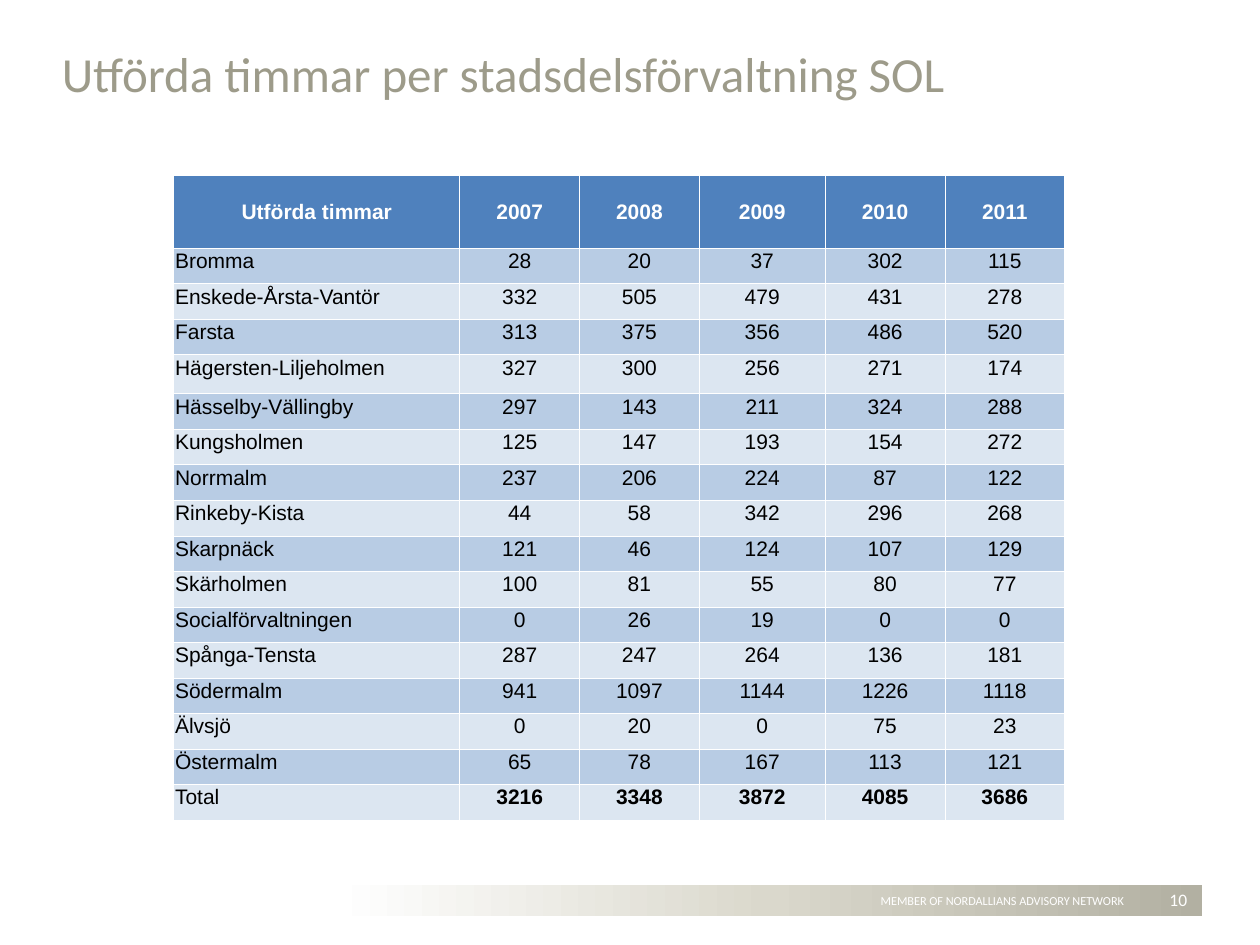
from copy import deepcopy

from lxml import etree
from pptx import Presentation
from pptx.dml import color
from pptx.enum import shapes, text
from pptx.oxml import ns
from pptx.util import Inches, Pt

YEARS = ["2007", "2008", "2009", "2010", "2011"]
HOURS = [
    ("Bromma", 28, 20, 37, 302, 115),
    ("Enskede-Årsta-Vantör", 332, 505, 479, 431, 278),
    ("Farsta", 313, 375, 356, 486, 520),
    ("Hägersten-Liljeholmen", 327, 300, 256, 271, 174),
    ("Hässelby-Vällingby", 297, 143, 211, 324, 288),
    ("Kungsholmen", 125, 147, 193, 154, 272),
    ("Norrmalm", 237, 206, 224, 87, 122),
    ("Rinkeby-Kista", 44, 58, 342, 296, 268),
    ("Skarpnäck", 121, 46, 124, 107, 129),
    ("Skärholmen", 100, 81, 55, 80, 77),
    ("Socialförvaltningen", 0, 26, 19, 0, 0),
    ("Spånga-Tensta", 287, 247, 264, 136, 181),
    ("Södermalm", 941, 1097, 1144, 1226, 1118),
    ("Älvsjö", 0, 20, 0, 75, 23),
    ("Östermalm", 65, 78, 167, 113, 121),
    ("Total", 3216, 3348, 3872, 4085, 3686),
]
COLUMN_WIDTHS = [2.27, 0.95, 0.95, 1, 0.95, 0.95]
TABLE_HEIGHT = 5.12
HEADER_HEIGHT = 0.58
TALL_ROW, TALL_HEIGHT = 4, 0.31
WHITE = "FFFFFF"


def rgb(value):
    return color.RGBColor.from_string(value)


def write(frame, words, size, font, fill, align=text.PP_ALIGN.LEFT, bold=False):
    paragraph = frame.paragraphs[0]
    paragraph.alignment = align
    run = paragraph.add_run()
    run.text = words
    run.font.size = Pt(size)
    run.font.name = font
    run.font.bold = bold
    run.font.color.rgb = rgb(fill)


def add_title(slide, words):
    title = slide.shapes.title
    title.left, title.top = Inches(0.39), Inches(0.07)
    title.width, title.height = Inches(8.29), Inches(0.79)
    frame = title.text_frame
    frame.auto_size = text.MSO_AUTO_SIZE.NONE
    frame.vertical_anchor = text.MSO_ANCHOR.BOTTOM
    write(frame, words, 28, "Calibri", "9D9B8A")


def add_footer_band(slide):
    band = slide.shapes.add_shape(
        shapes.MSO_SHAPE.RECTANGLE, Inches(2.66), Inches(7.02), Inches(6.88), Inches(0.25))
    band.shadow.inherit = False
    band.line.fill.background()
    band.fill.gradient()
    band.fill.gradient_angle = 180
    stop_list = band._element.spPr.find(".//" + ns.qn("a:gsLst"))
    stop_list.append(deepcopy(stop_list[-1]))
    stops = zip(band.fill.gradient_stops, (0, 0.5, 1), ("B2B0A2", "DAD8CC", WHITE))
    for stop, position, value in stops:
        stop.position = position
        stop.color.rgb = rgb(value)


def add_label(slide, words, left, top, width, height, size, align, wrap=True):
    box = slide.shapes.add_textbox(Inches(left), Inches(top), Inches(width), Inches(height))
    frame = box.text_frame
    frame.word_wrap = wrap
    if wrap:
        frame.vertical_anchor = text.MSO_ANCHOR.MIDDLE
    else:
        frame.auto_size = text.MSO_AUTO_SIZE.SHAPE_TO_FIT_TEXT
    write(frame, words, size, "Calibri", WHITE, align)


def add_borders(cell):
    properties = cell._tc.get_or_add_tcPr()
    for side in ("a:lnL", "a:lnR", "a:lnT", "a:lnB"):
        line = etree.SubElement(properties, ns.qn(side), w=str(Pt(0.5)))
        solid = etree.SubElement(line, ns.qn("a:solidFill"))
        etree.SubElement(solid, ns.qn("a:srgbClr"), val=WHITE)


def format_cell(cell, words, fill, font_color, align, bold):
    cell.margin_left = cell.margin_right = cell.margin_top = Inches(0.01)
    cell.margin_bottom = 0
    add_borders(cell)
    cell.fill.solid()
    cell.fill.fore_color.rgb = rgb(fill)
    write(cell.text_frame, words, 12, "Arial", font_color, align, bold)


def add_hours_table(slide):
    rows = [("Utförda timmar", *YEARS), *HOURS]
    table = slide.shapes.add_table(
        len(rows), len(COLUMN_WIDTHS), Inches(1.38), Inches(1.39),
        Inches(sum(COLUMN_WIDTHS)), Inches(TABLE_HEIGHT)).table
    table.horz_banding = False
    for column, width in zip(table.columns, COLUMN_WIDTHS):
        column.width = Inches(width)
    row_height = (TABLE_HEIGHT - HEADER_HEIGHT - TALL_HEIGHT) / (len(rows) - 2)
    special_heights = {0: HEADER_HEIGHT, TALL_ROW: TALL_HEIGHT}
    for row, values in enumerate(rows):
        table.rows[row].height = Inches(special_heights.get(row, row_height))
        header = row == 0
        total = row == len(rows) - 1
        fill = "4F81BD" if header else "B8CCE4" if row % 2 else "DCE6F1"
        for column, value in enumerate(values):
            cell = table.cell(row, column)
            left = column == 0 and not header
            align = text.PP_ALIGN.LEFT if left else text.PP_ALIGN.CENTER
            bold = header or (total and column > 0)
            format_cell(cell, str(value), fill, WHITE if header else "000000", align, bold)
            if header:
                cell.vertical_anchor = text.MSO_ANCHOR.MIDDLE


def main():
    presentation = Presentation()
    presentation.slide_width = Inches(10)
    presentation.slide_height = Inches(7.5)
    slide = presentation.slides.add_slide(presentation.slide_layouts[5])
    add_footer_band(slide)
    add_label(slide, "MEMBER OF NORDALLIANS ADVISORY NETWORK",
              6.65, 7.04, 2.61, 0.22, 7, text.PP_ALIGN.CENTER, wrap=False)
    add_title(slide, "Utförda timmar per stadsdelsförvaltning SOL")
    add_label(slide, "10", 9.06, 7.01, 0.46, 0.25, 10, text.PP_ALIGN.RIGHT)
    add_hours_table(slide)
    presentation.save("out.pptx")


if __name__ == "__main__":
    main()
